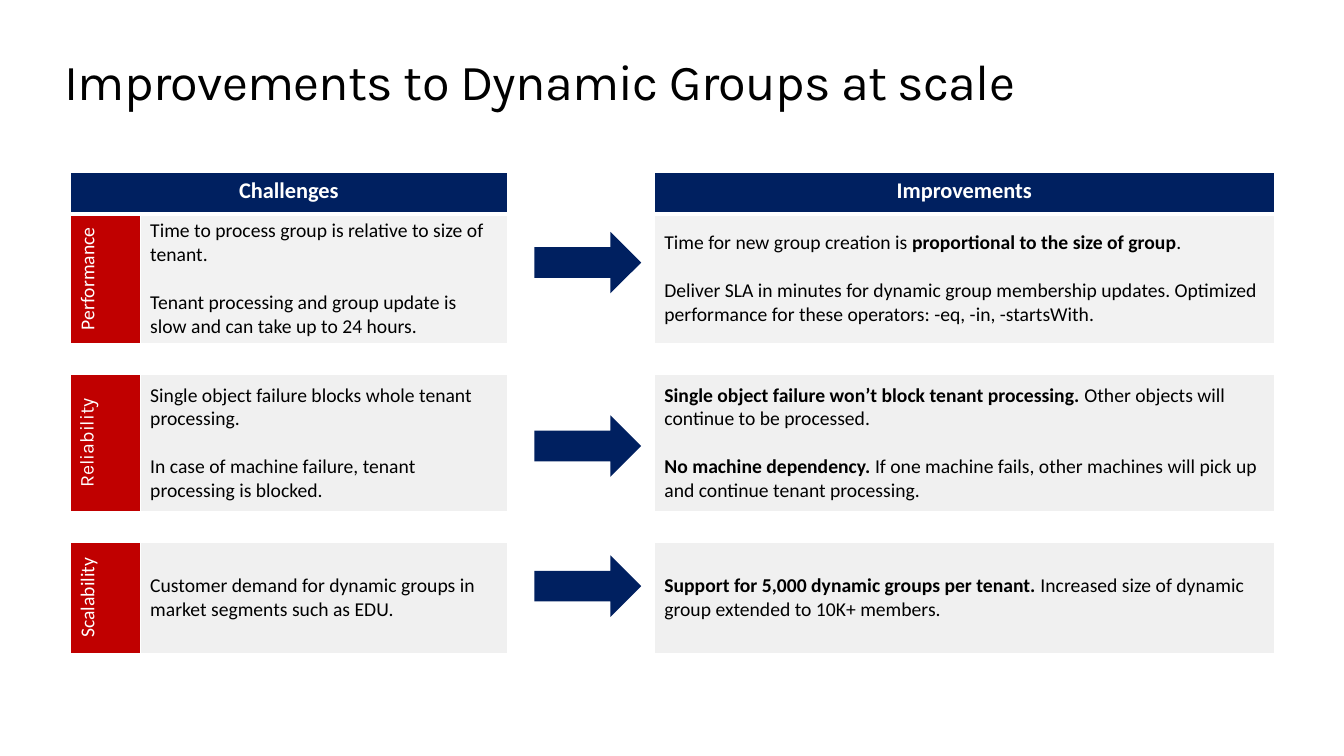
"""Build the slide on improvements to dynamic groups at scale."""
from dataclasses import dataclass
from typing import NamedTuple

from lxml import etree
from pptx import Presentation
from pptx.dml.color import RGBColor
from pptx.enum.shapes import MSO_SHAPE
from pptx.enum.text import MSO_ANCHOR, PP_ALIGN
from pptx.oxml.ns import qn
from pptx.util import Inches, Pt

RIGHT_ARROW = MSO_SHAPE.RIGHT_ARROW
MIDDLE, TOP = MSO_ANCHOR.MIDDLE, MSO_ANCHOR.TOP
CENTER, LEFT = PP_ALIGN.CENTER, PP_ALIGN.LEFT


@dataclass(frozen=True)
class Theme:
    navy: str = "002060"
    red: str = "C00000"
    white: str = "FFFFFF"
    black: str = "000000"
    heading_font: str = "Karla"
    body_font: str = "Calibri"
    title_size: float = 36
    header_size: float = 16
    body_size: float = 14
    spacer_size: float = 8
    paragraph_gap: float = 17
    thin_line: float = 1
    thick_line: float = 3


class Span(NamedTuple):
    text: str
    bold: bool = False


Paragraphs = list[list[Span]]


class TextStyle(NamedTuple):
    size: float
    color: str
    font: str
    align: PP_ALIGN = LEFT


@dataclass(frozen=True)
class Topic:
    name: str
    name_font: str
    first_row: int
    last_row: int
    panel: str
    arrow_drop: float
    challenges: Paragraphs
    improvements: Paragraphs


THEME = Theme()
SLIDE_WIDTH, SLIDE_HEIGHT = 13.33, 7.5
GRID_LEFT, GRID_TOP = 0.7, 1.71
COLUMNS = [0.69, 3.64, 1.46, 6.15]
ROWS = [0.41, 0.65, 0.64, 0.3, 0.56, 0.81, 0.3, 1.1]
NAME, CHALLENGE, ARROW, IMPROVEMENT = range(4)
ARROW_INSET, ARROW_WIDTH, ARROW_HEIGHT = 0.27, 1.06, 0.61

TOPICS = [
    Topic("Performance", THEME.body_font, 1, 2, "F2F2F2", 0.18,
          [[Span("Time to process group is relative to size of tenant.")],
           [Span("Tenant processing and group update is slow and can take up to 24 hours.")]],
          [[Span("Time for new group creation is "),
            Span("proportional to the size of group", True), Span(".")],
           [Span("Deliver SLA in minutes for dynamic group membership updates. "
                 "Optimized performance for these operators: -eq, -in, -startsWith.")]]),
    Topic("Reliability", THEME.heading_font, 4, 5, "F0F0F0", 0.41,
          [[Span("Single object failure blocks whole tenant processing.")],
           [Span("In case of machine failure, tenant processing is blocked.")]],
          [[Span("Single object failure won’t block tenant processing. ", True),
            Span("Other objects will continue to be processed.")],
           [Span("No machine dependency. ", True),
            Span("If one machine fails, other machines will pick up and continue "
                 "tenant processing.")]]),
    Topic("Scalability", THEME.body_font, 7, 7, "F0F0F0", 0.13,
          [[Span("Customer demand for dynamic groups in market segments such as EDU.")]],
          [[Span("Support for 5,000 dynamic groups per tenant. ", True),
            Span("Increased size of dynamic group extended to 10K+ members.")]]),
]


def rgb(color: str) -> RGBColor:
    return RGBColor.from_string(color)


def write(frame, paragraphs: Paragraphs, style: TextStyle) -> None:
    for index, spans in enumerate(paragraphs):
        para = frame.add_paragraph() if index else frame.paragraphs[0]
        para.alignment = style.align
        if index:
            para.space_before = Pt(THEME.paragraph_gap)
        for span in spans:
            run = para.add_run()
            run.text = span.text
            run.font.name = style.font
            run.font.size = Pt(style.size)
            run.font.bold = span.bold
            run.font.color.rgb = rgb(style.color)


def set_borders(cell, row: int) -> None:
    properties = cell._tc.get_or_add_tcPr()
    thick_side = {0: "lnB", 1: "lnT"}.get(row)
    for index, side in enumerate(("lnL", "lnR", "lnT", "lnB")):
        width = THEME.thick_line if side == thick_side else THEME.thin_line
        line = etree.Element(qn(f"a:{side}"), w=str(Pt(width)))
        fill = etree.SubElement(line, qn("a:solidFill"))
        etree.SubElement(fill, qn("a:srgbClr"), val=THEME.white)
        properties.insert(index, line)


def paint(cell, color: str) -> None:
    cell.fill.solid()
    cell.fill.fore_color.rgb = rgb(color)


def fill_cell(cell, color: str, paragraphs: Paragraphs, style: TextStyle,
              anchor: MSO_ANCHOR = MIDDLE) -> None:
    paint(cell, color)
    cell.vertical_anchor = anchor
    write(cell.text_frame, paragraphs, style)


def draw_title(page) -> None:
    box = page.shapes.add_textbox(Inches(0.64), Inches(0.5), Inches(10.01), Inches(0.61))
    frame = box.text_frame
    frame.word_wrap = True
    frame.margin_left = frame.margin_right = frame.margin_top = frame.margin_bottom = 0
    write(frame, [[Span("Improvements to Dynamic Groups at scale")]],
          TextStyle(THEME.title_size, THEME.black, THEME.heading_font))
    frame.paragraphs[0].runs[0].font._element.set("spc", "-50")


def draw_topic(table, topic: Topic) -> None:
    for column in (NAME, CHALLENGE, IMPROVEMENT):
        if topic.last_row > topic.first_row:
            table.cell(topic.first_row, column).merge(table.cell(topic.last_row, column))
    body = TextStyle(THEME.body_size, THEME.black, THEME.body_font)
    name_cell = table.cell(topic.first_row, NAME)
    fill_cell(name_cell, THEME.red, [[Span(topic.name)]],
              TextStyle(THEME.body_size, THEME.white, topic.name_font, CENTER))
    name_cell._tc.tcPr.set("vert", "vert270")
    fill_cell(table.cell(topic.first_row, CHALLENGE), topic.panel, topic.challenges, body)
    fill_cell(table.cell(topic.first_row, IMPROVEMENT), topic.panel, topic.improvements, body)


def draw_table(page) -> None:
    table = page.shapes.add_table(
        len(ROWS), len(COLUMNS), Inches(GRID_LEFT), Inches(GRID_TOP),
        Inches(sum(COLUMNS)), Inches(sum(ROWS))).table
    table.first_row = table.horz_banding = False
    for column, width in zip(table.columns, COLUMNS):
        column.width = Inches(width)
    for row_index, height in enumerate(ROWS):
        table.rows[row_index].height = Inches(height)
        for cell in table.rows[row_index].cells:
            paint(cell, THEME.white)
            set_borders(cell, row_index)
    table.cell(0, NAME).merge(table.cell(0, CHALLENGE))
    header = TextStyle(THEME.header_size, THEME.white, THEME.body_font, CENTER)
    for column, text in ((NAME, "Challenges"), (IMPROVEMENT, "Improvements")):
        fill_cell(table.cell(0, column), THEME.navy, [[Span(text, True)]], header, TOP)
    for topic in TOPICS:
        draw_topic(table, topic)
    for cell in table.iter_cells():
        if not cell.text_frame.text:
            etree.SubElement(cell.text_frame.paragraphs[0]._p, qn("a:endParaRPr"),
                             sz=str(int(THEME.spacer_size * 100)))


def draw_arrow(page, topic: Topic) -> None:
    left = GRID_LEFT + sum(COLUMNS[:ARROW]) + ARROW_INSET
    top = GRID_TOP + sum(ROWS[:topic.first_row]) + topic.arrow_drop
    arrow = page.shapes.add_shape(RIGHT_ARROW, Inches(left), Inches(top),
                                  Inches(ARROW_WIDTH), Inches(ARROW_HEIGHT))
    arrow.shadow.inherit = False
    arrow.fill.solid()
    arrow.fill.fore_color.rgb = rgb(THEME.navy)
    arrow.line.fill.background()


def main() -> None:
    deck = Presentation()
    deck.slide_width, deck.slide_height = Inches(SLIDE_WIDTH), Inches(SLIDE_HEIGHT)
    page = deck.slides.add_slide(deck.slide_layouts[6])
    draw_title(page)
    draw_table(page)
    for topic in TOPICS:
        draw_arrow(page, topic)
    deck.save("out.pptx")


if __name__ == "__main__":
    main()
